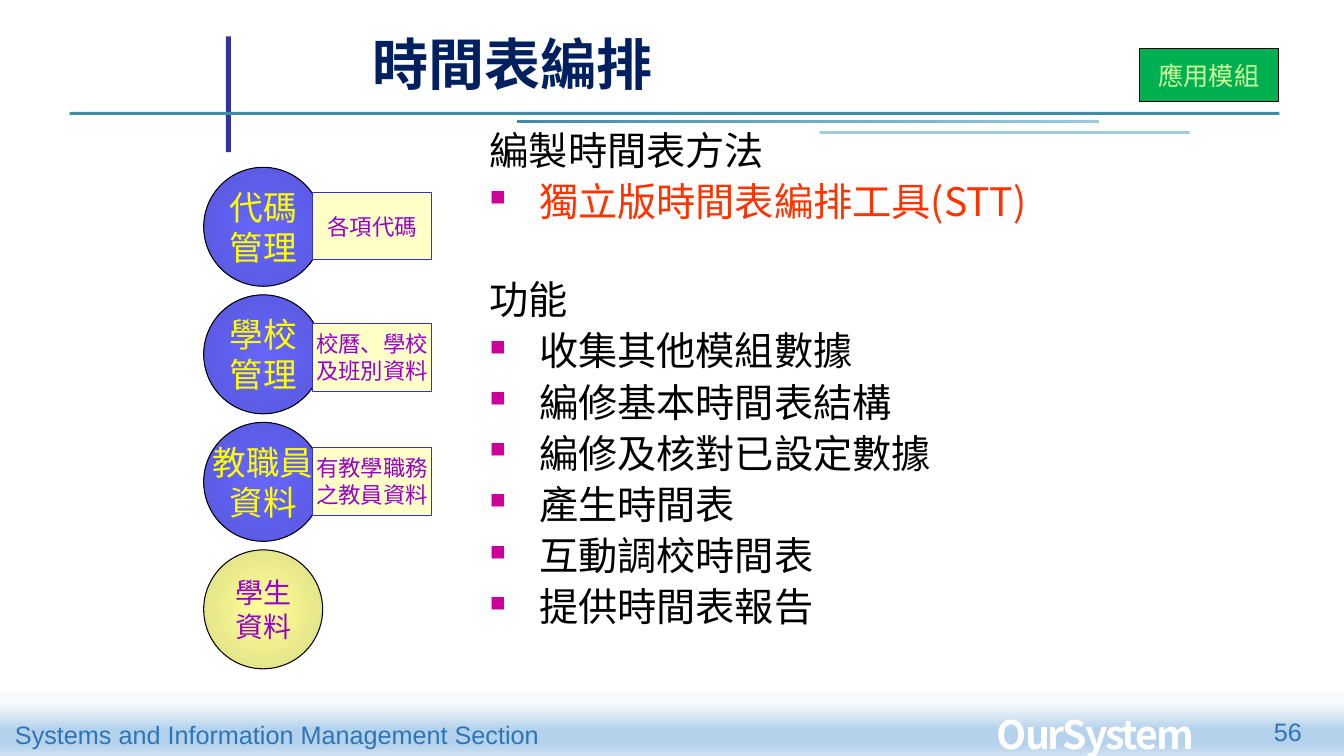
"""Build the timetabling slide with its source modules and function list."""
from lxml import etree
from pptx import Presentation
from pptx.dml.color import RGBColor
from pptx.enum.shapes import MSO_SHAPE
from pptx.enum.text import MSO_ANCHOR, PP_ALIGN
from pptx.oxml.ns import qn
from pptx.util import Inches, Pt

RECT, OVAL = MSO_SHAPE.RECTANGLE, MSO_SHAPE.OVAL
TOP, MIDDLE, BOTTOM = MSO_ANCHOR.TOP, MSO_ANCHOR.MIDDLE, MSO_ANCHOR.BOTTOM
LEFT, CENTER, RIGHT = PP_ALIGN.LEFT, PP_ALIGN.CENTER, PP_ALIGN.RIGHT
CJK, LATIN = "Noto Sans CJK SC", "Arial"
COLS, ROWS = 13.33, 7.5
C = {
    "navy": "002060", "indigo": "333399", "teal": "3F8DA5", "sky": "9BCAD9",
    "pale_teal": "A1CDDB", "footer": "2E75B6", "white": "FFFFFF", "black": "000000",
    "green": "00B050", "lime": "CCFF99", "yellow": "FFFF00", "purple": "9900CC",
    "cream": "FFFFC8", "note_line": "3333CC", "red": "FF3300", "bullet": "CC0099",
    "mist": "F7FAFD", "blue": "B5D2EC", "haze": "CEE1F2",
    "violet": "6666FF", "violet_rim": "5757DA", "lemon": "FFFF99", "lemon_rim": "DADA83",
}

prs = Presentation()
prs.slide_width, prs.slide_height = Inches(COLS), Inches(ROWS)
s = prs.slides.add_slide(prs.slide_layouts[6])
col, row = prs.slide_width / COLS, prs.slide_height / ROWS


def block(at, kind=None, fill=None, line=None, angle=None):
    """Add a text box or a preset shape; a list of stops makes a gradient."""
    x, y, w, h = (int(v * unit) for v, unit in zip(at, (col, row, col, row)))
    if kind is None:
        return s.shapes.add_textbox(x, y, w, h)
    sp = s.shapes.add_shape(kind, x, y, w, h)
    sp.shadow.inherit = False
    if isinstance(fill, list):
        sp.fill.gradient()
        grad = sp.fill._fill._gradFill
        for child in list(grad):
            grad.remove(child)
        stops = etree.SubElement(grad, qn("a:gsLst"))
        for pos, color in fill:
            gs = etree.SubElement(stops, qn("a:gs"), pos=str(pos * 1000))
            etree.SubElement(gs, qn("a:srgbClr"), val=C[color])
        if angle is None:
            centre = etree.SubElement(grad, qn("a:path"), path="circle")
            etree.SubElement(centre, qn("a:fillToRect"), l="50000", t="50000", r="50000", b="50000")
        else:
            etree.SubElement(grad, qn("a:lin"), ang=str(angle * 60000), scaled="0")
    else:
        sp.fill.solid()
        sp.fill.fore_color.rgb = RGBColor.from_string(C[fill])
    if line:
        sp.line.color.rgb = RGBColor.from_string(C[line])
        sp.line.width = Pt(0.75)
    else:
        sp.line.fill.background()
    return sp


def write(sp, text, size, color, font=CJK, bold=False, align=LEFT, anchor=TOP,
          wrap=True, before=0, bullet=False, spacing=None, pitch=None):
    """Append one paragraph per line of text to a shape."""
    tf = sp.text_frame
    tf.word_wrap, tf.vertical_anchor = wrap, anchor
    for line in text.split("\n"):
        p = tf.paragraphs[0] if not tf.text else tf.add_paragraph()
        p.alignment, p.space_before = align, Pt(before)
        if pitch:
            p.line_spacing = Pt(pitch)
        if bullet:
            pPr = p._p.get_or_add_pPr()
            pPr.set("marL", str(Inches(0.49)))
            pPr.set("indent", str(-Inches(0.49)))
            color_el = etree.SubElement(pPr, qn("a:buClr"))
            etree.SubElement(color_el, qn("a:srgbClr"), val=C["bullet"])
            etree.SubElement(pPr, qn("a:buSzPct"), val="55000")
            etree.SubElement(pPr, qn("a:buChar"), char="■")
        r = p.add_run()
        r.text = line
        r.font.size, r.font.name, r.font.bold = Pt(size), font, bold
        r.font.color.rgb = RGBColor.from_string(C[color])
        rPr = r._r.get_or_add_rPr()
        etree.SubElement(rPr, qn("a:ea"), typeface=font)
        if spacing:
            rPr.set("spc", str(int(spacing * 100)))


block((0, 6.87, COLS, ROWS - 6.87), RECT,
      [(18, "mist"), (58, "blue"), (81, "blue"), (100, "haze")], angle=90)
block((2.24, 0.36, 0.05, 1.15), RECT, "indigo")
block((0.69, 1.11, 12, 0.03), RECT, "teal")
block((5.13, 1.19, 5.77, 0.03), RECT, [(0, "teal"), (100, "sky")], angle=0)
block((8.13, 1.3, 3.67, 0.03), RECT, "pale_teal")

write(block((0.05, 7.09, 5.45, 0.4)), "Systems and Information Management Section",
      18, "footer", font=LATIN, wrap=False)
write(block((9.79, 7, 2.73, 0.57)), "OurSystem", 28, "white", bold=True, spacing=-1.5)
write(block((11.7, 7.06, 1.31, 0.5)), "56", 18, "footer", font=LATIN, align=RIGHT)
write(block((3.6, 0.18, 4.09, 0.83)), "時間表編排", 40, "navy", bold=True, anchor=BOTTOM)
write(block((11.3, 0.48, 1.38, 0.53), RECT, "green", "black"), "應用模組",
      18, "lime", align=CENTER, anchor=MIDDLE, wrap=False)

body = block((4.76, 1.2, 6.91, 5.96))
write(body, "編製時間表方法", 28, "black", pitch=33.6)
write(body, "獨立版時間表編排工具(STT)", 28, "red", before=3, bullet=True, pitch=33.6)
write(body, "功能", 28, "black", before=36.6, pitch=33.6)
write(body, "收集其他模組數據\n編修基本時間表結構\n編修及核對已設定數據\n產生時間表\n互動調校時間表\n提供時間表報告",
      28, "black", before=3, bullet=True, pitch=33.6)

violet = [(0, "violet"), (100, "violet_rim")]
lemon = [(0, "lemon"), (100, "lemon_rim")]
modules = [
    ("代碼\n管理", violet, "yellow", 24, "各項代碼", 1.91),
    ("學校\n管理", violet, "yellow", 24, "校曆、學校\n及班別資料", 3.21),
    ("教職員\n資料", violet, "yellow", 24, "有教學職務\n之教員資料", 4.44),
    ("學生\n資料", lemon, "purple", 20, None, None),
]
for i, (name, fill, color, size, note, note_top) in enumerate(modules):
    circle = block((2.02, 1.66 + 1.265 * i, 1.18, 1.18), OVAL, fill, "black")
    write(circle, name, size, color, align=CENTER, anchor=MIDDLE, wrap=False, pitch=size * 1.2)
    if note:
        card = block((3.1, note_top, 1.18, 0.67), RECT, "cream", "note_line")
        write(card, note, 16, "purple", align=CENTER, anchor=MIDDLE, wrap=False, pitch=19.2)

prs.save("out.pptx")
